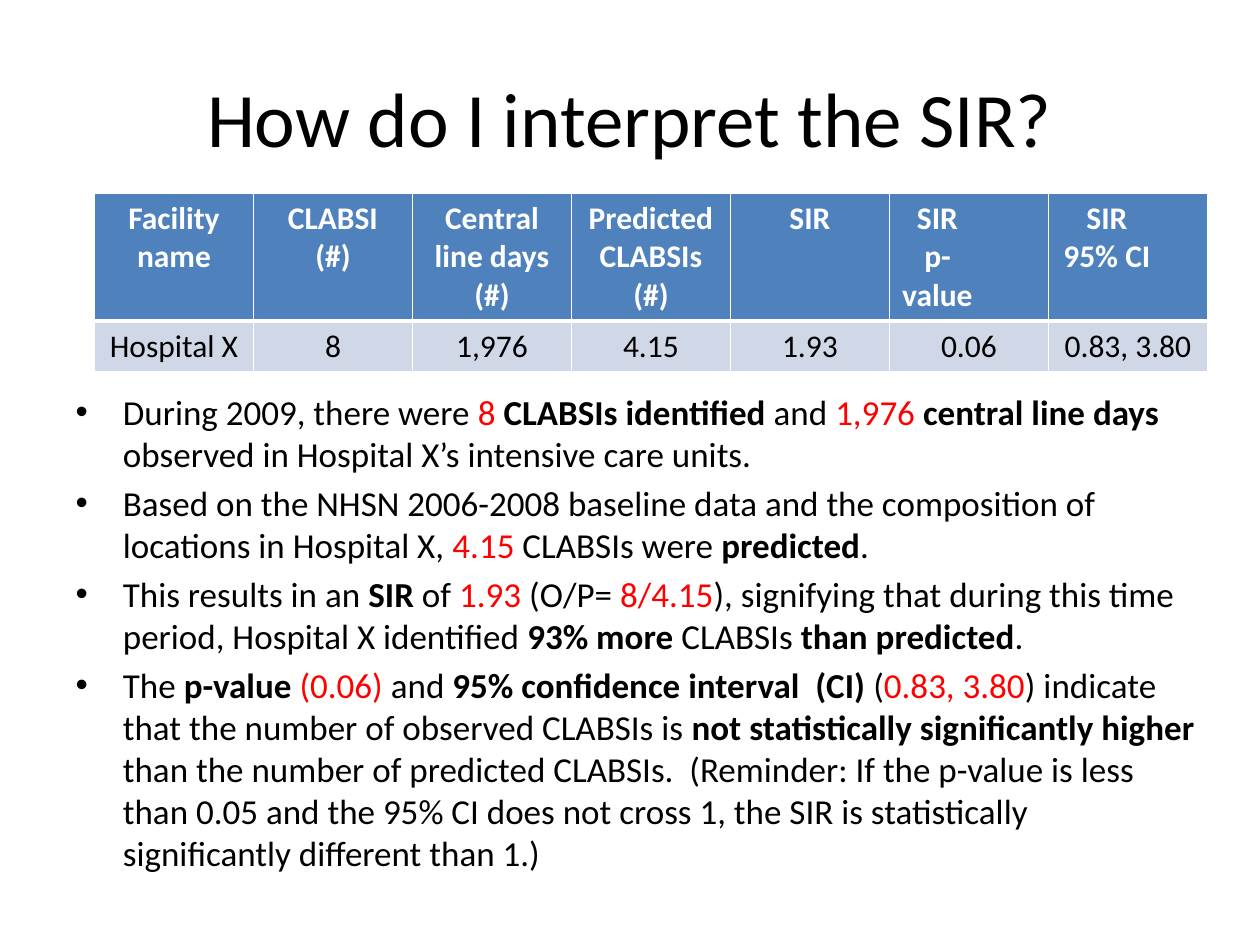
from pptx import Presentation
from pptx.dml.color import RGBColor
from pptx.enum.text import MSO_ANCHOR, MSO_AUTO_SIZE, PP_ALIGN
from pptx.oxml import parse_xml
from pptx.oxml.ns import nsdecls
from pptx.util import Pt

CENTER, LEFT = PP_ALIGN.CENTER, PP_ALIGN.LEFT
MIDDLE, TOP = MSO_ANCHOR.MIDDLE, MSO_ANCHOR.TOP
NO_FIT = MSO_AUTO_SIZE.NONE
BLACK, WHITE, RED = "000000", "FFFFFF", "FF0000"
BLUE, PALE = "4F81BD", "D0D8E8"

# Newlines split paragraphs
HEADS = ["Facility name", "CLABSI\n(#)", "Central line days (#)",
         "Predicted CLABSIs (#)", "SIR", "SIR\np-value", "SIR\n95% CI"]
VALUES = ["Hospital X", "8", "1,976", "4.15", "1.93", "0.06", "0.83, 3.80"]
SHIFTS = {5: 36, 6: 24}  # right indent of the first header line, by column

# Runs are split by |; a leading * means bold and ~ means red
POINTS = [
    "During 2009, there were |~8 |*CLABSIs identified| and |~1,976 "
    "|*central line days |observed in Hospital X’s intensive care units.",
    "Based on the NHSN 2006-2008 baseline data and the composition of "
    "locations in Hospital X, |~4.15| CLABSIs were |*predicted|.",
    "This results in an |*SIR| of |~1.93| (O/P= |~8/4.15|), signifying that "
    "during this time period, Hospital X identified |*93% more |CLABSIs "
    "|*than predicted|.",
    "The |*p-value |~(0.06)| and |*95% confidence interval  (CI) |("
    "|~0.83, 3.80|) indicate that the number of observed CLABSIs is "
    "|*not statistically significantly higher |than the number of predicted "
    "CLABSIs.  (Reminder: If the p-value is less than 0.05 and the 95% CI "
    "does not cross 1, the SIR is statistically significantly different "
    "than 1.)",
]


def paint(target, color):
    target.rgb = RGBColor.from_string(color)


def place(shape, box):
    shape.left, shape.top, shape.width, shape.height = map(Pt, box)


def write(frame, text, size=18, color=BLACK, bold=False, align=CENTER):
    for i, line in enumerate(text.split("\n")):
        para = frame.paragraphs[0] if i == 0 else frame.add_paragraph()
        para.alignment = align
        for part in line.split("|"):
            run = para.add_run()
            run.text = part.lstrip("*~")
            font = run.font
            font.name, font.size = "Calibri", Pt(size)
            font.bold = bold or part.startswith("*")
            paint(font.color, RED if part.startswith("~") else color)


def edge(cell, **widths):
    props = cell._tc.get_or_add_tcPr()
    for side in "LRTB":
        props.append(parse_xml(
            f'<a:ln{side} {nsdecls("a")} w="{Pt(widths.get(side, 1))}">'
            f'<a:solidFill><a:srgbClr val="{WHITE}"/></a:solidFill>'
            f'</a:ln{side}>'))


def add_title(slide, box):
    title = slide.shapes.title
    place(title, box)
    frame = title.text_frame
    frame.auto_size, frame.vertical_anchor = NO_FIT, MIDDLE
    write(frame, "How do I interpret the SIR?", size=44)


def add_grid(slide, box):
    left, top, width, height = box
    grid = slide.shapes.add_table(
        2, len(HEADS), Pt(left), Pt(top), Pt(width), Pt(height)).table
    low = 29.2
    grid.rows[0].height, grid.rows[1].height = Pt(height - low), Pt(low)
    for col, pair in enumerate(zip(HEADS, VALUES)):
        grid.columns[col].width = Pt(width / len(HEADS))
        for row, text in enumerate(pair):
            head = row == 0
            cell = grid.cell(row, col)
            edge(cell, **({"B": 3} if head else {"T": 3}))
            cell.fill.solid()
            paint(cell.fill.fore_color, BLUE if head else PALE)
            write(cell.text_frame, text, bold=head,
                  color=WHITE if head else BLACK)
    # Nudge the first header line to the left
    for col, shift in SHIFTS.items():
        para = grid.cell(0, col).text_frame.paragraphs[0]
        para._p.get_or_add_pPr().set("marR", str(Pt(shift)))


def add_points(slide, box):
    body = slide.placeholders[1]
    place(body, box)
    frame = body.text_frame
    frame.auto_size, frame.vertical_anchor = NO_FIT, TOP
    write(frame, "\n".join(POINTS), size=20, align=LEFT)
    for para in frame.paragraphs:
        props = para._p.get_or_add_pPr()
        props.set("marL", str(Pt(27)))
        props.set("indent", str(Pt(-27)))
        props.append(parse_xml(
            f'<a:spcBef {nsdecls("a")}><a:spcPct val="20000"/></a:spcBef>'))
        props.append(parse_xml(f'<a:buChar {nsdecls("a")} char="•"/>'))


def main():
    deck = Presentation()
    deck.slide_width, deck.slide_height = Pt(720), Pt(540)
    slide = deck.slides.add_slide(deck.slide_layouts[1])
    add_title(slide, (36, 21.6, 648, 90))
    add_grid(slide, (54, 110.2, 636, 101.8))
    add_points(slide, (36, 219.6, 654, 302.4))
    deck.save("out.pptx")


if __name__ == "__main__":
    main()
